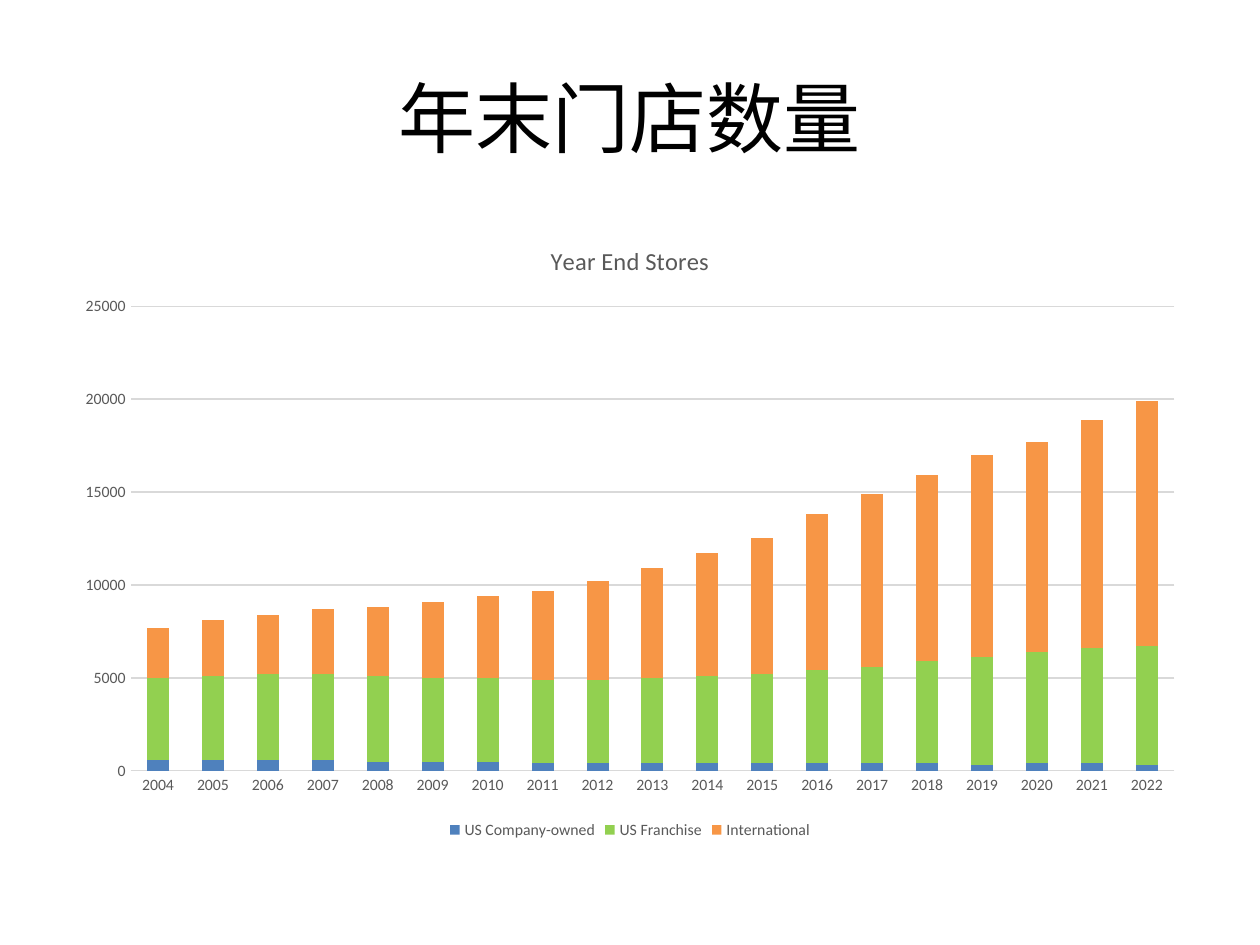
from pptx import Presentation, util as u
from pptx.chart.data import CategoryChartData
from pptx.dml.color import RGBColor
from pptx.enum import chart as ch, text

# Content
HEADING = "年末门店数量"
CHART_TITLE = "Year End Stores"
YEARS = [str(year) for year in range(2004, 2023)]
STORES = [
    ("US Company-owned", "4F81BD",
     [600, 600, 600, 600, 500, 500, 500, 400, 400, 400,
      400, 400, 400, 400, 400, 300, 400, 400, 300]),
    ("US Franchise", "92D050",
     [4400, 4500, 4600, 4600, 4600, 4500, 4500, 4500, 4500, 4600,
      4700, 4800, 5000, 5200, 5500, 5800, 6000, 6200, 6400]),
    ("International", "F79646",
     [2700, 3000, 3200, 3500, 3700, 4100, 4400, 4800, 5300, 5900,
      6600, 7300, 8400, 9300, 10000, 10900, 11300, 12300, 13200]),
]
FONT, BLACK, GREY, RULE = "Calibri", "000000", "595959", "D9D9D9"

# Layout
WIDTH, HEIGHT = u.Inches(10), u.Inches(7.5)
MARGIN = int(WIDTH * 0.05)
BODY_WIDTH = WIDTH - 2 * MARGIN


def color(value):
    return RGBColor.from_string(value)


def style_font(font, size, value):
    font.name, font.size, font.bold = FONT, u.Pt(size), False
    font.color.rgb = color(value)


def style_line(line):
    line.color.rgb = color(RULE)
    line.width = u.Pt(0.75)


prs = Presentation()
prs.slide_width, prs.slide_height = WIDTH, HEIGHT
slide = prs.slides.add_slide(prs.slide_layouts[5])

# Heading
heading = slide.shapes.title
heading.left, heading.top = MARGIN, int(HEIGHT * 0.04)
heading.width, heading.height = BODY_WIDTH, u.Inches(1.25)
heading.text_frame.text = HEADING
heading.text_frame.vertical_anchor = text.MSO_ANCHOR.MIDDLE
heading_line = heading.text_frame.paragraphs[0]
heading_line.alignment = text.PP_ALIGN.CENTER
style_font(heading_line.runs[0].font, 44, BLACK)

# Stacked columns
data = CategoryChartData()
data.categories = YEARS
for name, _, counts in STORES:
    data.add_series(name, counts)
chart = slide.shapes.add_chart(
    ch.XL_CHART_TYPE.COLUMN_STACKED, MARGIN, u.Inches(1.75),
    BODY_WIDTH, u.Inches(4.95), data).chart
style_font(chart.font, 10, BLACK)
plot = chart.plots[0]
plot.gap_width, plot.overlap = 150, 100
plot.vary_by_categories = False
for series, (_, fill, _) in zip(plot.series, STORES):
    series.format.fill.solid()
    series.format.fill.fore_color.rgb = color(fill)

# Chart title and legend
chart.has_title = True
chart.chart_title.include_in_layout = False
chart_title = chart.chart_title.text_frame
chart_title.text = CHART_TITLE
style_font(chart_title.paragraphs[0].runs[0].font, 14, GREY)
chart.has_legend = True
chart.legend.position = ch.XL_LEGEND_POSITION.BOTTOM
chart.legend.include_in_layout = False
style_font(chart.legend.font, 9, GREY)

# Axes
years, counts = chart.category_axis, chart.value_axis
for axis in (years, counts):
    axis.major_tick_mark = axis.minor_tick_mark = ch.XL_TICK_MARK.NONE
    style_font(axis.tick_labels.font, 9, GREY)
style_line(years.format.line)
counts.format.line.fill.background()
counts.minimum_scale, counts.maximum_scale, counts.major_unit = 0, 25000, 5000
counts.has_major_gridlines = True
style_line(counts.major_gridlines.format.line)

prs.save("out.pptx")
